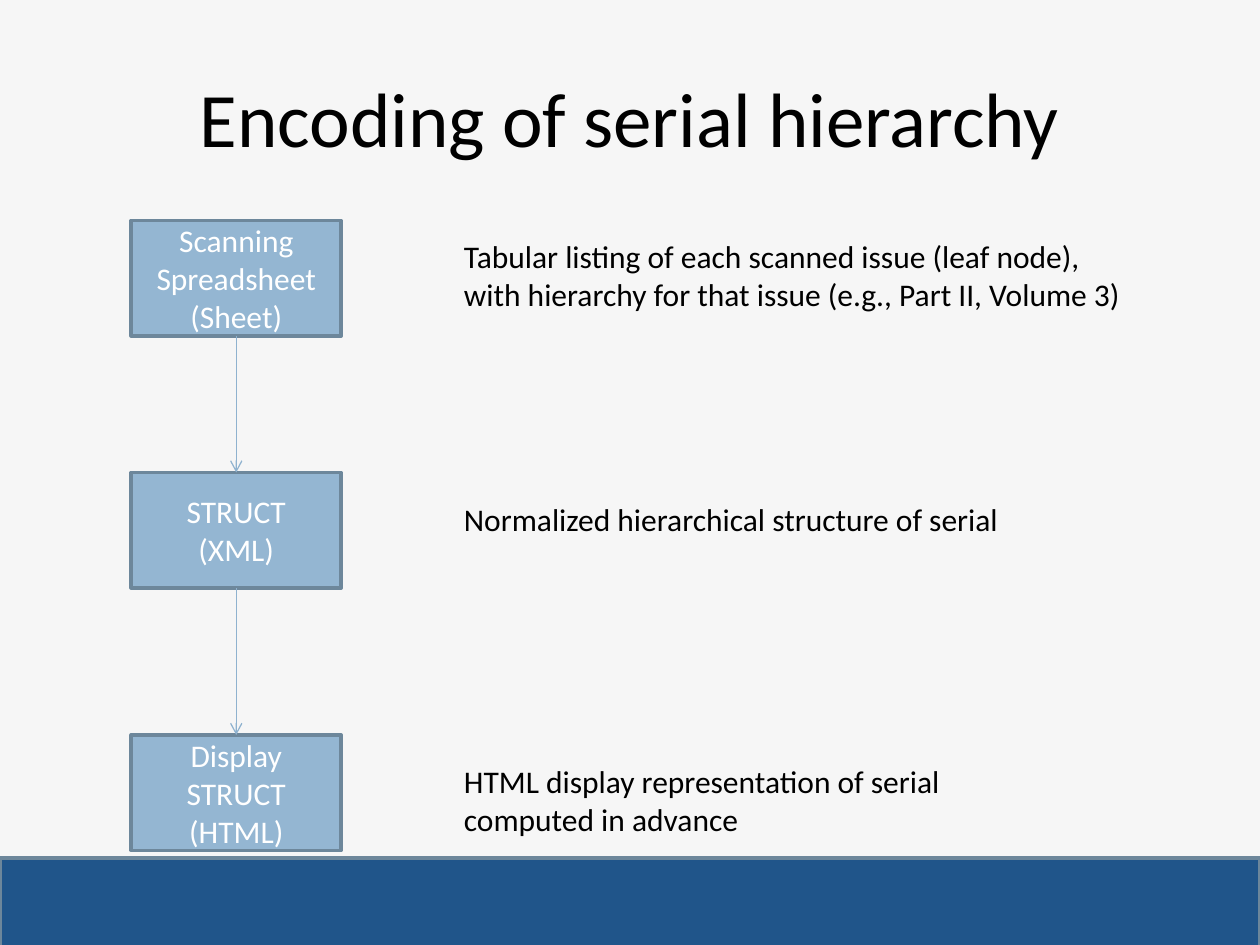
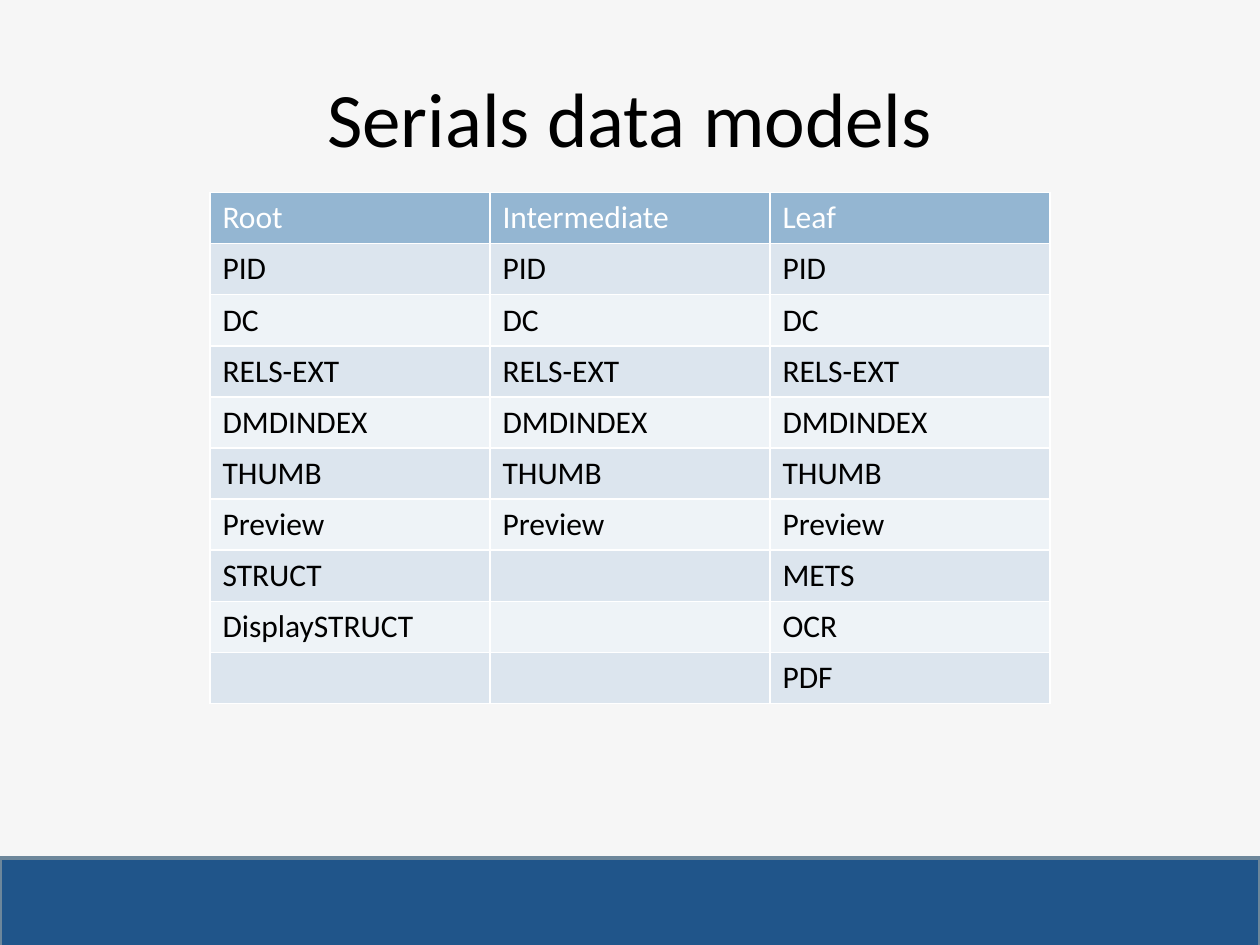
from dataclasses import dataclass
from itertools import pairwise, zip_longest

from lxml.etree import SubElement as Sub
from pptx import Presentation as Deck
from pptx.dml.color import RGBColor as Rgb
from pptx.enum.shapes import MSO_CONNECTOR as Link, MSO_SHAPE as Shape
from pptx.enum.text import MSO_ANCHOR as Anchor, MSO_AUTO_SIZE as Auto, PP_ALIGN as Align
from pptx.oxml.ns import qn
from pptx.util import Pt


@dataclass(frozen=True)
class Theme:
    """Hold the colours and type sizes of the deck."""
    face: str = "Calibri"
    page: str = "F6F6F6"
    band: str = "20558A"
    edge: str = "6D879B"
    box: str = "94B6D2"
    arrow: str = "8FB2CF"
    rows: tuple = ("DCE5EE", "EEF3F7")
    ink: str = "000000"
    white: str = "FFFFFF"
    head: int = 44
    body: int = 18


LOOK = Theme()
STEPS = [
    (126, ["Scanning Spreadsheet", "(Sheet)"], 394,
     ["Tabular listing of each scanned issue (leaf node),",
      "with hierarchy for that issue (e.g., Part II, Volume 3)"]),
    (270, ["STRUCT", "(XML)"], 323,
     ["Normalized hierarchical structure of serial"]),
    (420, ["Display", "STRUCT", "(HTML)"], 289,
     ["HTML display representation of serial", "computed in advance"]),
]
SHARED = ["PID", "DC", "RELS-EXT", "DMDINDEX", "THUMB", "Preview"]
MODELS = [
    ["Root", *SHARED, "STRUCT", "DisplaySTRUCT"],
    ["Intermediate", *SHARED],
    ["Leaf", *SHARED, "METS", "OCR", "PDF"],
]


def style(item, form):
    """Set each format value on an object."""
    for name, value in form.items():
        setattr(item, name, value)


def paint(fill, tint):
    """Make a fill solid in one colour."""
    fill.solid()
    fill.fore_color.rgb = Rgb.from_string(tint)


def write(frame, lines, size=LOOK.body, tint=LOOK.ink, align=Align.LEFT):
    """Write one paragraph for each line."""
    for num, line in enumerate(lines):
        para = frame.add_paragraph() if num else frame.paragraphs[0]
        para.text = line
        para.alignment = align
        style(para.font, {"name": LOOK.face, "size": Pt(size), "bold": False})
        para.font.color.rgb = Rgb.from_string(tint)


def add_box(slide, area, tint, lines=()):
    """Add an edged box with centred white text."""
    box = slide.shapes.add_shape(Shape.RECTANGLE, *map(Pt, area))
    box.shadow.inherit = False
    paint(box.fill, tint)
    paint(box.line.fill, LOOK.edge)
    box.line.width = Pt(2)
    style(box.text_frame, {"word_wrap": True, "vertical_anchor": Anchor.MIDDLE})
    write(box.text_frame, lines, tint=LOOK.white, align=Align.CENTER)
    return box


def add_note(slide, area, lines):
    """Add a note that keeps its own line breaks."""
    frame = slide.shapes.add_textbox(*map(Pt, area)).text_frame
    style(frame, {"word_wrap": False, "auto_size": Auto.SHAPE_TO_FIT_TEXT})
    write(frame, lines)


def add_arrow(slide, top, low):
    """Join the bottom of one box to the top of the next."""
    line = slide.shapes.add_connector(Link.STRAIGHT, 0, 0, 0, 0)
    line.begin_connect(top, 2)
    line.end_connect(low, 0)
    paint(line.line.fill, LOOK.arrow)
    line.line.width = Pt(0.75)
    Sub(line.line._get_or_add_ln(), qn("a:tailEnd"), type="arrow")
    Sub(line._element.spPr, qn("a:effectLst"))


def edge_cell(cell):
    """Draw thin white borders round a cell."""
    props = cell._tc.get_or_add_tcPr()
    for num, side in enumerate(("lnL", "lnR", "lnT", "lnB")):
        line = props.makeelement(qn(f"a:{side}"), {"w": str(Pt(1))})
        fill = Sub(line, qn("a:solidFill"))
        Sub(fill, qn("a:srgbClr"), val=LOOK.white)
        props.insert(num, line)


def add_grid(slide, area, lists):
    """Add a banded table with one list in each column."""
    rows = list(zip_longest(*lists, fillvalue=""))
    grid = slide.shapes.add_table(len(rows), len(lists), *map(Pt, area)).table
    for at, row in enumerate(rows):
        fill = LOOK.rows[(at - 1) % 2] if at else LOOK.box
        for col, text in enumerate(row):
            cell = grid.cell(at, col)
            paint(cell.fill, fill)
            edge_cell(cell)
            write(cell.text_frame, [text], tint=LOOK.ink if at else LOOK.white)


def add_slide(deck, title):
    """Add a slide with the shared band and title."""
    slide = deck.slides.add_slide(deck.slide_layouts[6])
    add_box(slide, (0, 490.3, 720, 55.4), LOOK.band)
    frame = slide.shapes.add_textbox(*map(Pt, (36, 21.6, 648, 90))).text_frame
    style(frame, {"word_wrap": True, "vertical_anchor": Anchor.MIDDLE})
    write(frame, [title], LOOK.head, align=Align.CENTER)
    return slide


def main():
    """Build and save the deck."""
    deck = Deck()
    style(deck, {"slide_width": Pt(720), "slide_height": Pt(540)})
    paint(deck.slide_master.background.fill, LOOK.page)

    flow = add_slide(deck, "Encoding of serial hierarchy")
    boxes = [add_box(flow, (75, top, 120, 66), LOOK.box, label)
             for top, label, _, _ in STEPS]
    for top, low in pairwise(boxes):
        add_arrow(flow, top, low)
    for top, _, wide, note in STEPS:
        add_note(flow, (258, top + 6 * (1 if top == 126 else 2), wide,
                        7.2 + 21.9 * len(note)), note)

    data = add_slide(deck, "Serials data models")
    add_grid(data, (120, 110, 480, 292), MODELS)
    deck.save("out.pptx")


if __name__ == "__main__":
    main()
